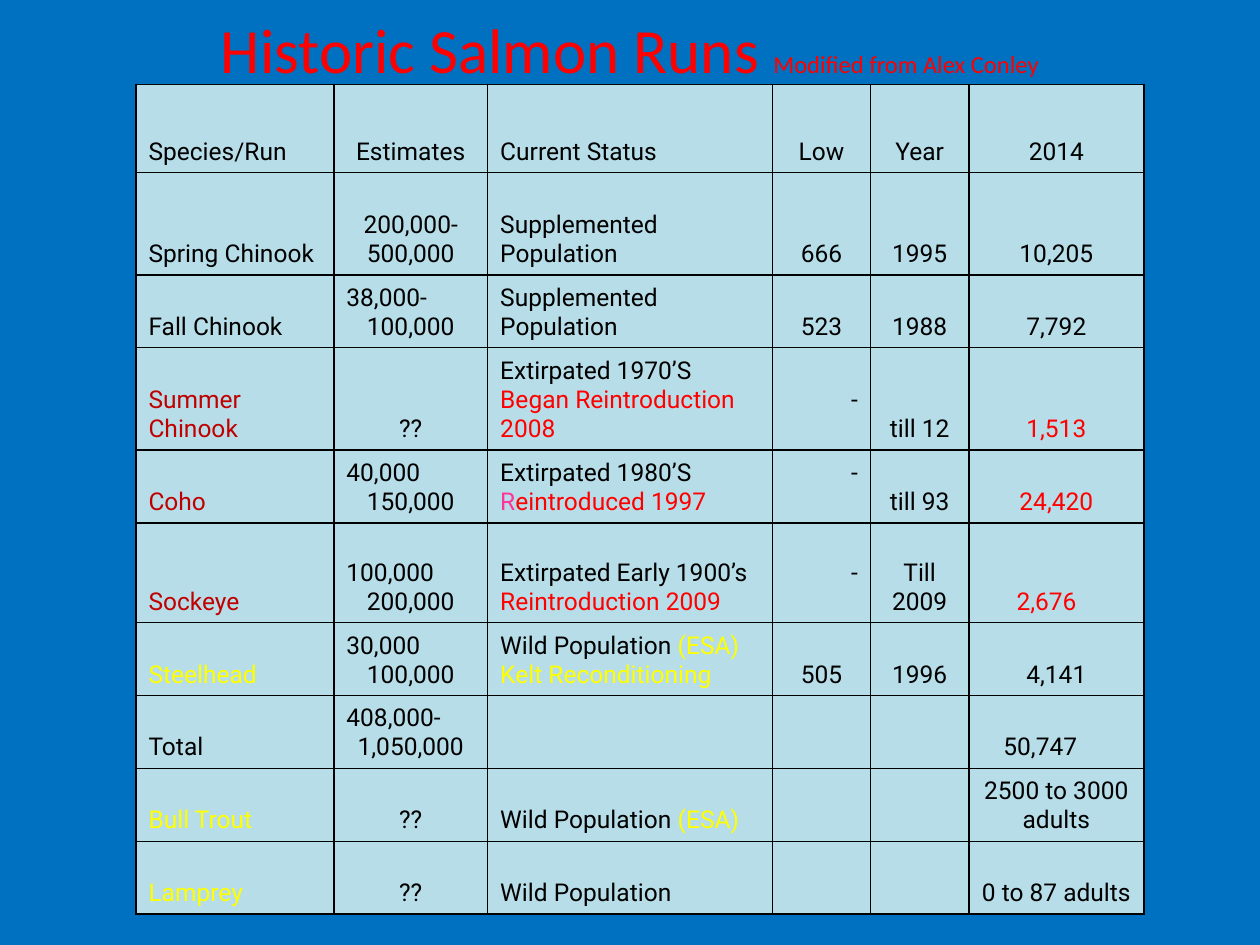
import pptx
import pptx.util
import pptx.dml.color
import pptx.enum.text
import pptx.oxml
import pptx.oxml.ns

Cm, Pt = pptx.util.Cm, pptx.util.Pt
ALIGN = pptx.enum.text.PP_ALIGN
ANCHOR = pptx.enum.text.MSO_ANCHOR

BLACK, RED, DARK_RED, YELLOW, PINK = "000000", "FF0000", "C00000", "FFFF00", "FF3399"
BLUE, PALE_BLUE = "0070C0", "B7DEE8"

COL_WIDTHS = [3.99, 3.1, 5.74, 1.98, 1.98, 3.53]
ROW_HEIGHTS = [1.78, 2.06, 1.47, 2.06, 1.47, 2.01, 1.47, 1.47, 1.47, 1.47]
LEFT_COLUMNS = (0, 2)
ESTIMATES, LOW, LATEST = 1, 3, 5
LATEST_MARGINS = {"2,676": 0.65, "50,747": 0.9}

# A cell is a list of paragraphs, and a paragraph is a list of (text, colour) runs.
ESA = [("Wild Population ", BLACK), ("(ESA)", YELLOW)]
SUPPLEMENTED = "Supplemented Population"
ROWS = [
    ["Species/Run", "Estimates", "Current Status", "Low", "Year", "2014"],
    ["Spring Chinook", [[("200,000-", BLACK)], [("500,000", BLACK)]],
     SUPPLEMENTED, "666", "1995", "10,205"],
    ["Fall Chinook", "38,000-\n100,000", SUPPLEMENTED, "523", "1988", "7,792"],
    [[[("Summer Chinook", DARK_RED)]], "??",
     [[("Extirpated 1970’S", BLACK)], [("Began Reintroduction 2008", RED)]],
     "-", "till 12", [[("1,513", RED)]]],
    [[[("Coho", DARK_RED)]], "40,000\n150,000",
     [[("Extirpated 1980’S ", BLACK), ("R", PINK), ("eintroduced 1997", RED)]],
     "-", "till 93", [[("24,420", RED)]]],
    [[[("Sockeye", DARK_RED)]], "100,000\n200,000",
     [[("Extirpated Early 1900’s", BLACK)], [("Reintroduction 2009", RED)]],
     "-", "Till 2009", [[("2,676", RED)]]],
    [[[("Steelhead", YELLOW)]], "30,000\n100,000",
     [ESA, [("Kelt Reconditioning", YELLOW)]], "505", "1996", "4,141"],
    ["Total", "408,000-\n1,050,000", "", "", "", "50,747"],
    [[[("Bull Trout", YELLOW)]], "??", [ESA], "", "", "2500 to 3000 adults"],
    [[[("Lamprey", YELLOW)]], "??", "Wild Population", "", "", "0 to 87 adults"],
]


def rgb(colour):
    """Return the colour of a hex string."""
    return pptx.dml.color.RGBColor.from_string(colour)


def add_run(p, text, size, font, colour):
    """Add a formatted run to a paragraph."""
    r = p.add_run()
    r.text = text
    r.font.size = Pt(size)
    r.font.name = font
    r.font.color.rgb = rgb(colour)


def add_title(s):
    """Place the title and its small credit."""
    sp = s.shapes.title
    sp.left, sp.top, sp.width, sp.height = Cm(1.27), Cm(-0.2), Cm(22.86), Cm(2.34)
    tf = sp.text_frame
    tf.vertical_anchor = ANCHOR.MIDDLE
    p = tf.paragraphs[0]
    p.alignment = ALIGN.CENTER
    add_run(p, "Historic Salmon Runs ", 36, "Calibri", RED)
    add_run(p, "Modified from Alex Conley", 14, "Calibri", RED)


def set_borders(cell):
    """Draw a thin black line on each side of a cell."""
    tcPr = cell._tc.get_or_add_tcPr()
    for side in ("lnL", "lnR", "lnT", "lnB"):
        tcPr.append(pptx.oxml.parse_xml(
            f'<a:{side} {pptx.oxml.ns.nsdecls("a")} w="12700"><a:solidFill>'
            f'<a:srgbClr val="{BLACK}"/></a:solidFill></a:{side}>'))


def fill_cell(cell, content, column):
    """Write and align the paragraphs of one cell."""
    set_borders(cell)
    cell.fill.solid()
    cell.fill.fore_color.rgb = rgb(PALE_BLUE)
    cell.vertical_anchor = ANCHOR.BOTTOM
    is_range = column == ESTIMATES and "\n" in content
    if isinstance(content, str):
        content = [[(line, BLACK)] for line in content.split("\n") if line]
    tf = cell.text_frame
    for i, runs in enumerate(content):
        p = tf.add_paragraph() if i else tf.paragraphs[0]
        p.alignment = ALIGN.LEFT if column in LEFT_COLUMNS else ALIGN.CENTER
        if is_range and i == 0:
            p.alignment = ALIGN.LEFT
        for text, colour in runs:
            add_run(p, text, 14, "Roboto", colour)
    if column == LOW and tf.text == "-":
        tf.paragraphs[0].alignment = ALIGN.RIGHT
        cell.margin_bottom = Cm(0.71)
    if column == LATEST and tf.text in LATEST_MARGINS:
        cell.margin_right = Cm(LATEST_MARGINS[tf.text])


def add_runs_table(s):
    """Add the table of salmon runs."""
    table = s.shapes.add_table(
        len(ROWS), len(COL_WIDTHS), Cm(2.74), Cm(1.7),
        Cm(sum(COL_WIDTHS)), Cm(sum(ROW_HEIGHTS))).table
    table.first_row = table.horz_banding = False
    for column, width in zip(table.columns, COL_WIDTHS):
        column.width = Cm(width)
    for row, height, contents in zip(table.rows, ROW_HEIGHTS, ROWS):
        row.height = Cm(height)
        for i, (cell, content) in enumerate(zip(row.cells, contents)):
            fill_cell(cell, content, i)


def main():
    """Build and save the slide."""
    prs = pptx.Presentation()
    prs.slide_width, prs.slide_height = Cm(25.4), Cm(19.05)
    s = prs.slides.add_slide(prs.slide_layouts[5])
    s.background.fill.solid()
    s.background.fill.fore_color.rgb = rgb(BLUE)
    add_title(s)
    add_runs_table(s)
    prs.save("out.pptx")


if __name__ == "__main__":
    main()
